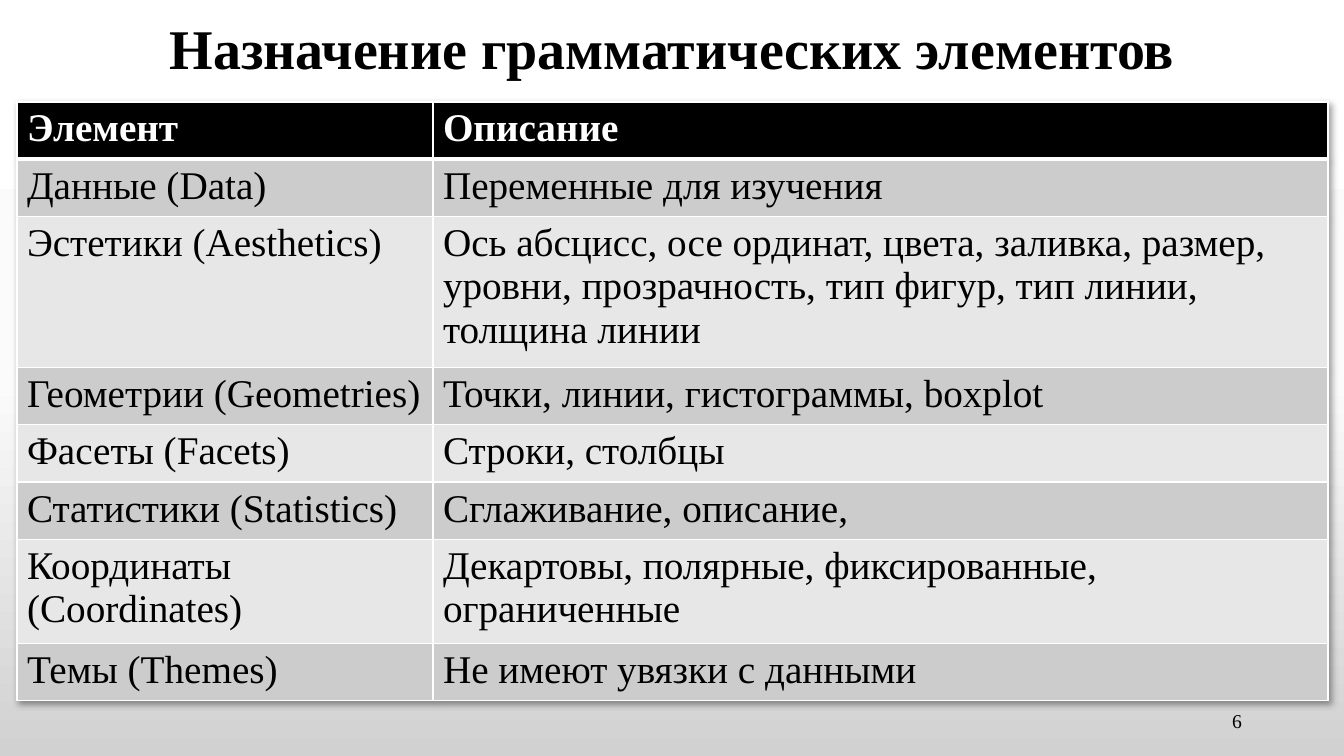
"""Build a slide with a table of the grammar-of-graphics elements and their purpose."""
from copy import deepcopy
from dataclasses import dataclass

from lxml.etree import SubElement
from pptx import Presentation
from pptx.dml.color import RGBColor
from pptx.enum.text import MSO_ANCHOR, MSO_AUTO_SIZE, PP_ALIGN
from pptx.oxml.ns import qn
from pptx.oxml.xmlchemy import BaseOxmlElement
from pptx.slide import Slide
from pptx.table import _Cell
from pptx.text.text import TextFrame, _Paragraph
from pptx.util import Emu, Pt

EMU_PER_PX = 914400 / 100.8


@dataclass(frozen=True)
class Theme:
    font: str = "Times New Roman"
    dark: str = "000000"
    light: str = "FFFFFF"
    bands: tuple[str, str] = ("CCCCCC", "E7E7E7")
    backdrop: tuple[str, ...] = ("FFFFFF", "FBFBFB", "D1D1D1")
    title_size: int = 40
    table_size: int = 28
    number_size: int = 14
    rule: int = 1
    header_rule: int = 3


@dataclass(frozen=True)
class Box:
    left: int
    top: int
    width: int
    height: int

    def emu(self) -> tuple[Emu, Emu, Emu, Emu]:
        return px(self.left), px(self.top), px(self.width), px(self.height)


@dataclass(frozen=True)
class Entry:
    element: str
    purpose: str
    height: int = 54


THEME = Theme()
COLUMN_WIDTHS = (416, 895)
ENTRIES = (
    Entry("Элемент", "Описание"),
    Entry("Данные (Data)", "Переменные для изучения"),
    Entry(
        "Эстетики (Aesthetics)",
        "Ось абсцисс, осе ординат, цвета, заливка, размер, уровни, "
        "прозрачность, тип фигур, тип линии, толщина линии",
        140,
    ),
    Entry("Геометрии (Geometries)", "Точки, линии, гистограммы, boxplot"),
    Entry("Фасеты (Facets)", "Строки, столбцы"),
    Entry("Статистики (Statistics)", "Сглаживание, описание,"),
    Entry(
        "Координаты (Coordinates)",
        "Декартовы, полярные, фиксированные, ограниченные",
        97,
    ),
    Entry("Темы (Themes)", "Не имеют увязки с данными"),
)


def px(length: int) -> Emu:
    return Emu(round(length * EMU_PER_PX))


def write(frame: TextFrame, text: str, size: int, color: str, bold: bool = False) -> _Paragraph:
    frame.text = text
    frame.word_wrap = True
    paragraph = frame.paragraphs[0]
    font = paragraph.font
    font.name, font.size, font.bold = THEME.font, Pt(size), bold
    font.color.rgb = RGBColor.from_string(color)
    return paragraph


def paint_backdrop(slide: Slide) -> None:
    fill = slide.background.fill
    fill.gradient()
    fill.gradient_angle = 270
    first = slide.element.find(".//" + qn("a:gs"))
    first.addnext(deepcopy(first))
    last = len(THEME.backdrop) - 1
    for index, (stop, color) in enumerate(zip(fill.gradient_stops, THEME.backdrop)):
        stop.position = index / last
        stop.color.rgb = RGBColor.from_string(color)


def add_title(slide: Slide, text: str, box: Box) -> None:
    title = slide.shapes.title
    title.left, title.top, title.width, title.height = box.emu()
    frame = title.text_frame
    paragraph = write(frame, text, THEME.title_size, THEME.dark, bold=True)
    frame.auto_size = MSO_AUTO_SIZE.NONE
    frame.vertical_anchor = MSO_ANCHOR.MIDDLE
    paragraph.alignment = PP_ALIGN.CENTER
    paragraph.line_spacing = 0.9


def add_page_number(slide: Slide, text: str, box: Box) -> None:
    frame = slide.shapes.add_textbox(*box.emu()).text_frame
    paragraph = write(frame, text, THEME.number_size, THEME.dark)
    frame.vertical_anchor = MSO_ANCHOR.MIDDLE
    paragraph.alignment = PP_ALIGN.RIGHT


def add_color(parent: BaseOxmlElement, color: str) -> BaseOxmlElement:
    return SubElement(parent, qn("a:srgbClr"), val=color)


def set_borders(cell: _Cell, top: int, bottom: int) -> None:
    properties = cell._tc.get_or_add_tcPr()
    widths = {"lnL": THEME.rule, "lnR": THEME.rule, "lnT": top, "lnB": bottom}
    for position, (side, width) in enumerate(widths.items()):
        line = SubElement(properties, qn(f"a:{side}"), w=str(Pt(width)))
        add_color(SubElement(line, qn("a:solidFill")), THEME.light)
        properties.insert(position, line)


def add_shadow(properties: BaseOxmlElement) -> None:
    effects = SubElement(properties, qn("a:effectLst"))
    shadow = SubElement(
        effects, qn("a:outerShdw"), blurRad=str(Pt(4)), dist=str(Pt(3)),
        dir="2700000", algn="tl", rotWithShape="0",
    )
    SubElement(add_color(shadow, THEME.dark), qn("a:alpha"), val="40000")
    properties.insert(0, effects)


def add_elements_table(slide: Slide, left: int, top: int) -> None:
    box = Box(left, top, sum(COLUMN_WIDTHS), sum(entry.height for entry in ENTRIES))
    table = slide.shapes.add_table(len(ENTRIES), len(COLUMN_WIDTHS), *box.emu()).table
    add_shadow(table._tbl.tblPr)
    for column, width in zip(table.columns, COLUMN_WIDTHS):
        column.width = px(width)
    for index, (row, entry) in enumerate(zip(table.rows, ENTRIES)):
        row.height = px(entry.height)
        header = index == 0
        fill = THEME.dark if header else THEME.bands[(index - 1) % 2]
        ink = THEME.light if header else THEME.dark
        top_rule = THEME.header_rule if index == 1 else THEME.rule
        bottom_rule = THEME.header_rule if header else THEME.rule
        for cell, text in zip(row.cells, (entry.element, entry.purpose)):
            write(cell.text_frame, text, THEME.table_size, ink, bold=header)
            cell.fill.solid()
            cell.fill.fore_color.rgb = RGBColor.from_string(fill)
            set_borders(cell, top_rule, bottom_rule)


def main() -> None:
    presentation = Presentation()
    presentation.slide_width, presentation.slide_height = px(1344), px(756)
    slide = presentation.slides.add_slide(presentation.slide_layouts[5])
    paint_backdrop(slide)
    add_title(slide, "Назначение грамматических элементов", Box(0, 0, 1344, 102))
    add_page_number(slide, "6", Box(950, 701, 302, 40))
    add_elements_table(slide, 17, 102)
    presentation.save("out.pptx")


if __name__ == "__main__":
    main()
